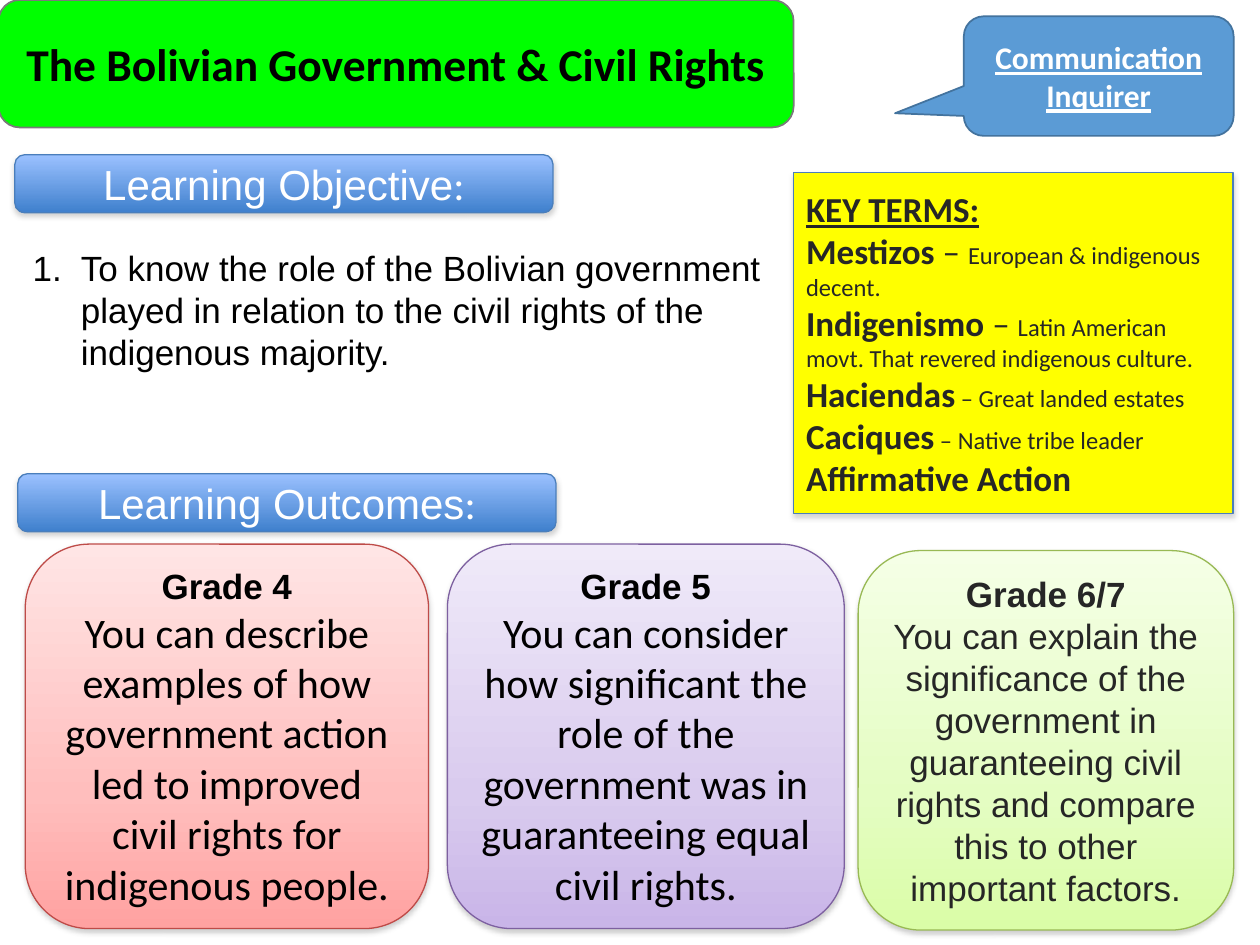
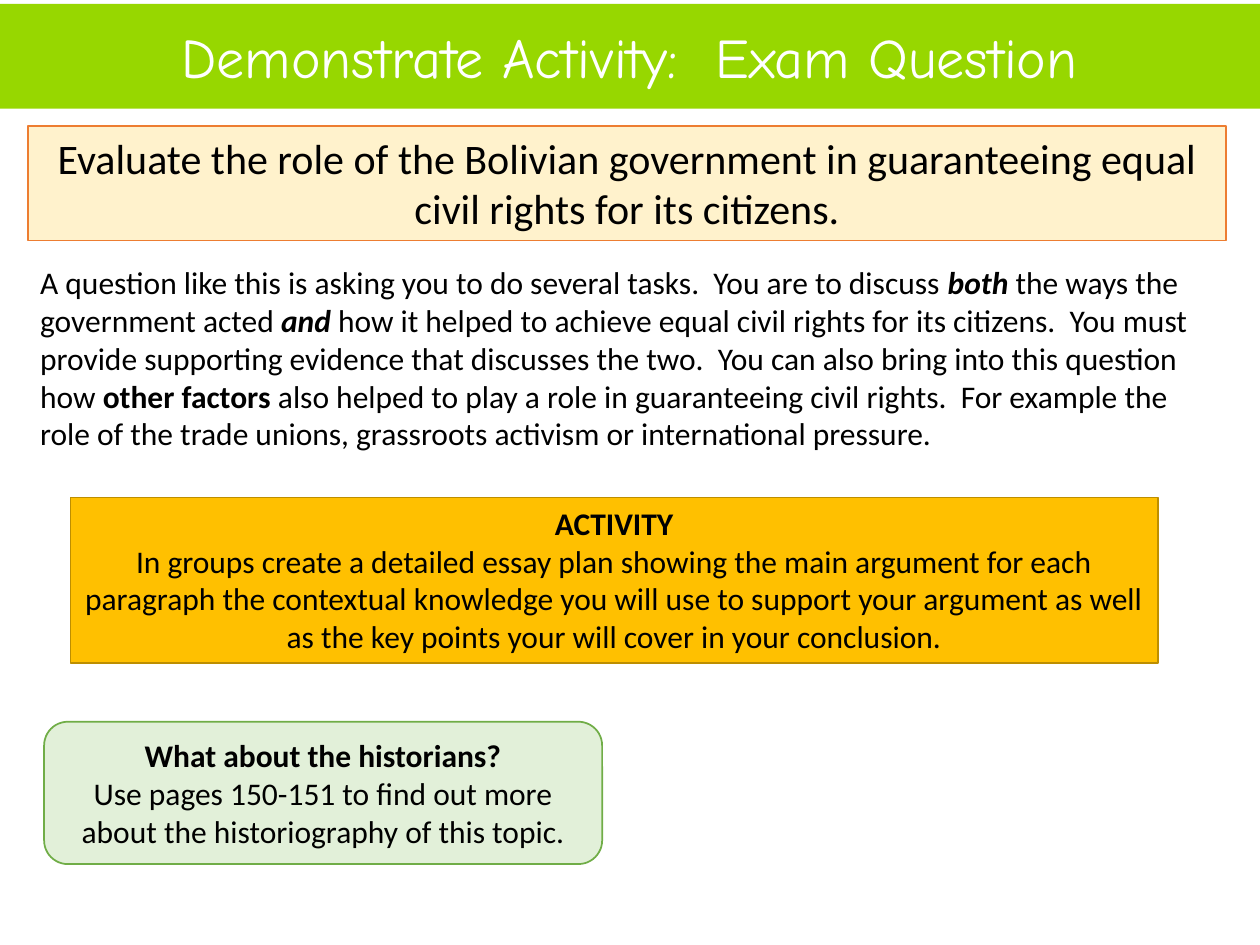
from dataclasses import dataclass

from lxml import etree
from pptx import Presentation
from pptx.dml.color import RGBColor
from pptx.enum.shapes import MSO_SHAPE
from pptx.enum.text import MSO_ANCHOR, MSO_AUTO_SIZE, PP_ALIGN
from pptx.oxml.ns import qn
from pptx.util import Cm, Pt

RECTANGLE = MSO_SHAPE.RECTANGLE
ROUNDED = MSO_SHAPE.ROUNDED_RECTANGLE
CALLOUT = MSO_SHAPE.ROUNDED_RECTANGULAR_CALLOUT
LEFT, CENTER = PP_ALIGN.LEFT, PP_ALIGN.CENTER
TOP, MIDDLE = MSO_ANCHOR.TOP, MSO_ANCHOR.MIDDLE
GROW = MSO_AUTO_SIZE.SHAPE_TO_FIT_TEXT

ARIAL, CALIBRI, COMIC = "Arial", "Calibri", "Comic Neue"

BLACK = RGBColor(0x00, 0x00, 0x00)
WHITE = RGBColor(0xFF, 0xFF, 0xFF)
CHARCOAL = RGBColor(0x26, 0x26, 0x26)
SHADOW_GRAY = RGBColor(0x80, 0x80, 0x80)
TITLE_GREEN = RGBColor(0x00, 0xFF, 0x00)
TITLE_EDGE = RGBColor(0x7A, 0x7A, 0x7A)
CALLOUT_BLUE = RGBColor(0x5B, 0x9B, 0xD5)
CALLOUT_EDGE = RGBColor(0x43, 0x73, 0x9E)
BLUE_LIGHT = RGBColor(0x9B, 0xC1, 0xFF)
BLUE_DARK = RGBColor(0x3F, 0x80, 0xCD)
BLUE_EDGE = RGBColor(0x4A, 0x7E, 0xBB)
YELLOW = RGBColor(0xFF, 0xFF, 0x00)
RED_EDGE = RGBColor(0xBE, 0x4B, 0x48)
PURPLE_EDGE = RGBColor(0x7D, 0x60, 0xA0)
LIME_EDGE = RGBColor(0x98, 0xB9, 0x54)
BAND_GREEN = RGBColor(0x97, 0xD7, 0x00)
CREAM = RGBColor(0xFF, 0xF2, 0xCC)
ORANGE = RGBColor(0xED, 0x7D, 0x31)
GOLD = RGBColor(0xFF, 0xC0, 0x00)
GOLD_EDGE = RGBColor(0xBD, 0x8E, 0x00)
PALE_GREEN = RGBColor(0xE2, 0xF0, 0xD9)
LEAF_GREEN = RGBColor(0x70, 0xAD, 0x47)

# Gradient stops: position in percent and colour
BLUE_STOPS = [(0, BLUE_LIGHT), (100, BLUE_DARK)]
RED_STOPS = [(0, RGBColor(0xFF, 0xE5, 0xE5)), (65, RGBColor(0xFF, 0xBE, 0xBD)),
             (100, RGBColor(0xFF, 0xA2, 0xA1))]
PURPLE_STOPS = [(0, RGBColor(0xF0, 0xEA, 0xF9)), (65, RGBColor(0xD9, 0xCB, 0xEE)),
                (100, RGBColor(0xC9, 0xB5, 0xE8))]
LIME_STOPS = [(0, RGBColor(0xF5, 0xFF, 0xE6)), (65, RGBColor(0xE4, 0xFD, 0xC2)),
              (100, RGBColor(0xDA, 0xFD, 0xA7))]


@dataclass
class Run:
    text: str
    size: int = 18
    font: str = CALIBRI
    bold: bool = False
    italic: bool = False
    underline: bool = False


def write_text(shape, paragraphs, color, align=CENTER, anchor=MIDDLE):
    """Each paragraph is a list of runs."""
    frame = shape.text_frame
    frame.word_wrap = True
    frame.vertical_anchor = anchor
    for index, runs in enumerate(paragraphs):
        paragraph = frame.paragraphs[0] if index == 0 else frame.add_paragraph()
        paragraph.alignment = align
        for item in runs:
            run = paragraph.add_run()
            run.text = item.text
            font = run.font
            font.name, font.size = item.font, Pt(item.size)
            font.bold, font.italic, font.underline = item.bold, item.italic, item.underline
            font.color.rgb = color


def set_gradient(shape, stops):
    """Fill from top to bottom."""
    shape.fill.gradient()
    shape.fill.gradient_angle = 270
    stop_list = shape._element.spPr.find(".//" + qn("a:gsLst"))
    for old_stop in list(stop_list):
        stop_list.remove(old_stop)
    for position, color in stops:
        stop = etree.SubElement(stop_list, qn("a:gs"), pos=str(position * 1000))
        etree.SubElement(stop, qn("a:srgbClr"), val=str(color))


def add_shadow(shape, opacity, distance):
    effects = shape._element.spPr.find(qn("a:effectLst"))
    shadow = etree.SubElement(effects, qn("a:outerShdw"), blurRad=str(Pt(3.1)),
                              dist=str(Pt(distance)), dir="5400000", rotWithShape="0")
    color = etree.SubElement(shadow, qn("a:srgbClr"), val=str(SHADOW_GRAY))
    etree.SubElement(color, qn("a:alpha"), val=str(opacity * 1000))


def add_box(slide, kind, place, fill, edge=None, edge_width=1):
    """Fill is one colour or a list of gradient stops; place is in centimetres."""
    shape = slide.shapes.add_shape(kind, *map(Cm, place))
    shape.shadow.inherit = False
    if isinstance(fill, list):
        set_gradient(shape, fill)
    else:
        shape.fill.solid()
        shape.fill.fore_color.rgb = fill
    if edge is None:
        shape.line.fill.background()
    else:
        shape.line.color.rgb = edge
        shape.line.width = Pt(edge_width)
    return shape


def add_text_box(slide, place, paragraphs):
    box = slide.shapes.add_textbox(*map(Cm, place))
    write_text(box, paragraphs, BLACK, LEFT, TOP)
    box.text_frame.auto_size = GROW
    return box


def add_heading(slide, left, top, label):
    heading = add_box(slide, ROUNDED, (left, top, 10.85, 1.17), BLUE_STOPS, BLUE_EDGE, 0.75)
    add_shadow(heading, 35, 1.8)
    write_text(heading, [[Run(label, 24, ARIAL), Run(":", 24)]], WHITE)


def add_grade_card(slide, place, stops, edge, grade, outcome, color=BLACK):
    card = add_box(slide, ROUNDED, place, stops, edge, 0.75)
    add_shadow(card, 38, 1.6)
    write_text(card, [[Run(grade, 20, ARIAL, bold=True)], [outcome]], color)


def add_key_terms(slide):
    panel = add_box(slide, RECTANGLE, (16, 3.48, 8.86, 6.88), YELLOW, BLUE_EDGE, 0.75)
    add_shadow(panel, 35, 1.8)
    # Term, size of its dash, meaning
    terms = [("Mestizos", 20, "European & indigenous decent."),
             ("Indigenismo", 20, "Latin American movt. That revered indigenous culture."),
             ("Haciendas", 14, "Great landed estates"),
             ("Caciques", 14, "Native tribe leader")]
    paragraphs = [[Run("KEY TERMS:", 20, bold=True, underline=True)]]
    paragraphs += [[Run(term, 20, bold=True), Run(" – ", dash_size), Run(meaning, 14)]
                   for term, dash_size, meaning in terms]
    paragraphs.append([Run("Affirmative Action", 20, bold=True)])
    write_text(panel, paragraphs, CHARCOAL, LEFT)


def number_paragraph(paragraph, indent):
    properties = paragraph._p.get_or_add_pPr()
    properties.set("marL", str(Cm(indent)))
    properties.set("indent", str(-Cm(indent)))
    etree.SubElement(properties, qn("a:buFont"), typeface=ARIAL)
    etree.SubElement(properties, qn("a:buAutoNum"), type="arabicPeriod")


def build_objectives(slide):
    # Headings
    add_heading(slide, 0.3, 3.12, "Learning Objective")
    add_heading(slide, 0.36, 9.55, "Learning Outcomes")

    # Grade outcomes
    add_grade_card(slide, (0.51, 10.97, 8.13, 7.75), RED_STOPS, RED_EDGE, "Grade 4",
                   Run("You can describe examples of how government action led to "
                       "improved civil rights for indigenous people.", 24))
    add_grade_card(slide, (9.02, 10.97, 8, 7.75), PURPLE_STOPS, PURPLE_EDGE, "Grade 5",
                   Run("You can consider how significant the role of the government "
                       "was in guaranteeing equal civil rights.", 24))
    add_grade_card(slide, (17.3, 11.1, 7.57, 7.65), LIME_STOPS, LIME_EDGE, "Grade 6/7",
                   Run("You can explain the significance of the government in "
                       "guaranteeing civil rights and compare this to other important "
                       "factors.", 20, ARIAL), CHARCOAL)

    # Objective and key terms
    objective = add_text_box(slide, (0.41, 4.85, 17.22, 2.82), [[
        Run("To know the role of the Bolivian government played in relation to the "
            "civil rights of the indigenous majority.", 20, ARIAL)]])
    number_paragraph(objective.text_frame.paragraphs[0], 0.97)
    add_key_terms(slide)

    # Title and callout
    title = add_box(slide, ROUNDED, (-0.03, 0, 16.03, 2.57), TITLE_GREEN, TITLE_EDGE)
    write_text(title, [[Run("The Bolivian Government & Civil Rights", 26, bold=True)]], BLACK)
    callout = add_box(slide, CALLOUT, (19.43, 0.33, 5.44, 2.41), CALLOUT_BLUE, CALLOUT_EDGE)
    callout.adjustments[0] = -0.755
    callout.adjustments[1] = 0.311
    write_text(callout, [[Run(word, bold=True, underline=True)]
                         for word in ("Communication", "Inquirer")], WHITE)


def build_exam_question(slide):
    # Title band
    band = add_box(slide, RECTANGLE, (0, 0.08, 25.4, 2.11), BAND_GREEN)
    write_text(band, [[Run("Demonstrate Activity:  Exam Question", 32, COMIC)]], WHITE)

    # Question and guidance
    question = add_box(slide, RECTANGLE, (0.56, 2.54, 24.16, 2.31), CREAM, ORANGE)
    write_text(question, [[Run("Evaluate the role of the Bolivian government in guaranteeing "
                               "equal civil rights for its citizens.", 24)]], BLACK, anchor=TOP)
    add_text_box(slide, (0.56, 5.18, 24.16, 4.11), [[
        Run("A question like this is asking you to do several tasks.  You are to discuss "),
        Run("both", bold=True, italic=True),
        Run(" the ways the government acted "),
        Run("and", bold=True, italic=True),
        Run(" how it helped to achieve equal civil rights for its citizens.  You must "
            "provide supporting evidence that discusses the two.  You can also bring into "
            "this question how "),
        Run("other factors ", bold=True),
        Run("also helped to play a role in guaranteeing civil rights.  For example the role "
            "of the trade unions, grassroots activism or international pressure.")]])

    # Activity and further reading
    activity = add_box(slide, RECTANGLE, (1.42, 10.03, 21.92, 3.33), GOLD, GOLD_EDGE)
    write_text(activity, [
        [Run("ACTIVITY", bold=True)],
        [Run("In groups create a detailed essay plan showing the main argument for each "
             "paragraph the contextual knowledge you will use to support your argument as "
             "well as the key points your will cover in your conclusion.")]], BLACK, anchor=TOP)
    historians = add_box(slide, ROUNDED, (0.89, 14.55, 11.25, 2.87), PALE_GREEN, LEAF_GREEN)
    write_text(historians, [
        [Run("What about the historians?", bold=True)],
        [Run("Use pages 150-151 to find out more about the historiography of this topic.")]],
        BLACK)


def main():
    presentation = Presentation()
    presentation.slide_width, presentation.slide_height = Cm(25.4), Cm(19.05)
    blank_layout = presentation.slide_layouts[6]
    for build in (build_objectives, build_exam_question):
        build(presentation.slides.add_slide(blank_layout))
    presentation.save("out.pptx")


if __name__ == "__main__":
    main()
